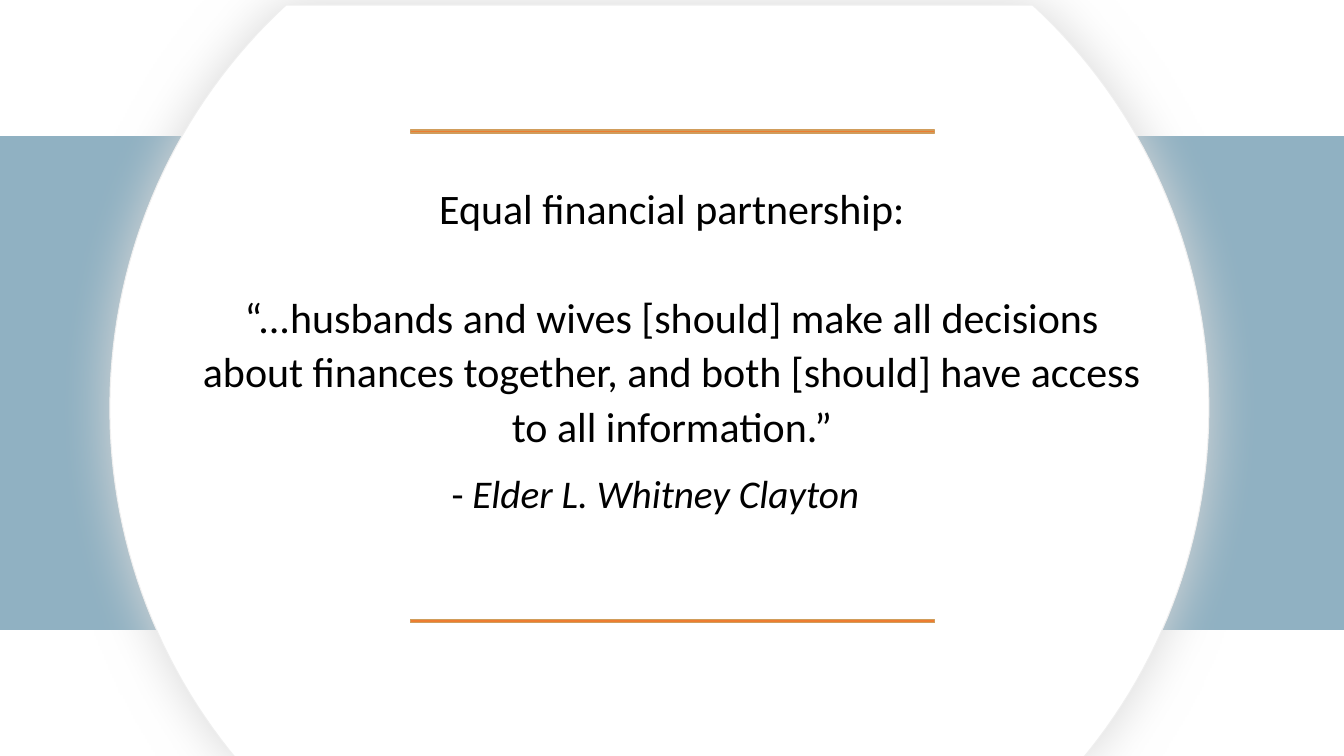
from math import asin, cos, pi, sin
from lxml.etree import SubElement
from pptx import Presentation
from pptx.dml.color import RGBColor
from pptx.enum.shapes import MSO_SHAPE
from pptx.enum.text import MSO_ANCHOR, PP_ALIGN
from pptx.oxml.ns import qn
from pptx.util import Inches, Pt

COLORS = {
    "band": "90B1C2",
    "disc": "FFFFFF",
    "disc_edge": "EFEFEF",
    "glow": "D8D8D8",
    "rule": "ED7D31",
    "rule_edge": "D09D5C",
    "text": "000000",
}


def paint(shape, fill, edge):
    shape.shadow.inherit = False
    shape.fill.solid()
    shape.fill.fore_color.rgb = RGBColor.from_string(COLORS[fill])
    shape.line.color.rgb = RGBColor.from_string(COLORS[edge])
    shape.line.width = Pt(0.75)


def add_text(left, top, width, height):
    frame = slide.shapes.add_textbox(
        Inches(left), Inches(top), Inches(width), Inches(height)).text_frame
    frame.word_wrap = True
    frame.vertical_anchor = MSO_ANCHOR.BOTTOM
    return frame


prs = Presentation()
prs.slide_width = Inches(13.33)
prs.slide_height = Inches(7.5)
slide = prs.slides.add_slide(prs.slide_layouts[6])

band = slide.shapes.add_shape(
    MSO_SHAPE.RECTANGLE, 0, Inches(1.35), prs.slide_width, Inches(4.9))
paint(band, "band", "band")

center_x, center_y, radius = 6.54, 4.05, 5.45
disc_top, disc_bottom = 0.05, 7.55
start = asin((disc_top - center_y) / radius)
end = asin((disc_bottom - center_y) / radius)
steps = 60
right_arc = [start + (end - start) * i / steps for i in range(steps + 1)]
left_arc = [pi - angle for angle in reversed(right_arc)]
outline = [(Inches(center_x + radius * cos(a)), Inches(center_y + radius * sin(a)))
           for a in right_arc + left_arc]
builder = slide.shapes.build_freeform(*outline[0])
builder.add_line_segments(outline[1:], close=True)
disc = builder.convert_to_shape()
paint(disc, "disc", "disc_edge")
effects = disc._element.spPr.find(qn("a:effectLst"))
glow = SubElement(effects, qn("a:outerShdw"), blurRad=str(Pt(37)),
                  dist="0", dir="0", algn="ctr", rotWithShape="0")
SubElement(glow, qn("a:srgbClr"), val=COLORS["glow"])

for rule_top in (1.29, 6.15):
    rule = slide.shapes.add_shape(
        MSO_SHAPE.RECTANGLE, Inches(4.07), Inches(rule_top), Inches(5.2), Inches(0.03))
    paint(rule, "rule", "rule_edge")

quote = add_text(1.79, 1.35, 9.75, 3.17)
quote.text = (
    "Equal financial partnership:\n"
    "“...husbands and wives [should] make all decisions about finances together, "
    "and both [should] have access to all information.”")
for paragraph in quote.paragraphs:
    paragraph.alignment = PP_ALIGN.CENTER
    paragraph.line_spacing = 1.08
    paragraph.font.size = Pt(30)
quote.paragraphs[1].space_before = Pt(39)

speaker = add_text(4.38, 4.13, 4.32, 1.04)
credit = speaker.paragraphs[0]
credit.font.size = Pt(28)
credit.add_run().text = "- "
name = credit.add_run()
name.text = "Elder L. Whitney Clayton"
name.font.italic = True

for paragraph in (*quote.paragraphs, credit):
    paragraph.font.name = "Calibri"
    paragraph.font.color.rgb = RGBColor.from_string(COLORS["text"])

prs.save("out.pptx")
